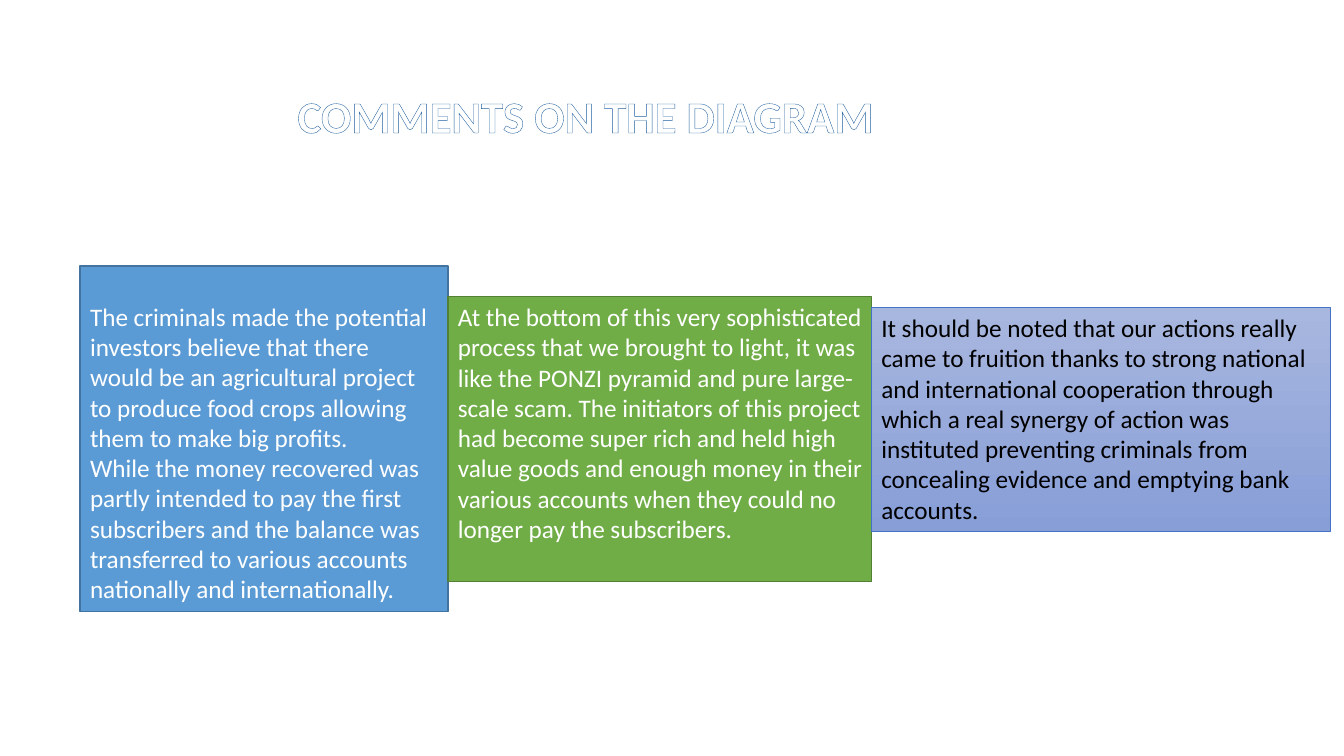
from lxml.etree import SubElement
from pptx import Presentation
from pptx.dml.color import RGBColor
from pptx.enum.shapes import MSO_SHAPE
from pptx.enum.text import MSO_ANCHOR, PP_ALIGN
from pptx.oxml.ns import qn
from pptx.util import Cm, Pt

COMMENTS = [
    {"top": 6.7, "width": 9.27, "height": 8.71, "fill": ["5B9BD5"],
     "line": "43739E", "line_width": 1, "color": "FFFFFF",
     "frame": {"vertical_anchor": MSO_ANCHOR.BOTTOM, "margin_bottom": Cm(0.2)},
     "paragraphs": [
         "The criminals made the potential investors believe that there would "
         "be an agricultural project to produce food crops allowing them to "
         "make big profits.",
         "While the money recovered was partly intended to pay the first "
         "subscribers and the balance was transferred to various accounts "
         "nationally and internationally."]},
    {"top": 7.47, "width": 10.67, "height": 7.19, "fill": ["70AD47"],
     "line": "538035", "line_width": 1, "color": "FFFFFF",
     "frame": {"vertical_anchor": MSO_ANCHOR.TOP, "margin_right": Cm(0.2)},
     "paragraphs": [
         "At the bottom of this very sophisticated process that we brought to "
         "light, it was like the PONZI pyramid and pure large-scale scam. The "
         "initiators of this project had become super rich and held high "
         "value goods and enough money in their various accounts when they "
         "could no longer pay the subscribers."]},
    {"top": 7.75, "width": 11.56, "height": 5.64, "fill": ["A8B7DF", "889ED7"],
     "line": "4472C4", "line_width": 0.5, "color": "000000",
     "frame": {"vertical_anchor": MSO_ANCHOR.TOP},
     "paragraphs": [
         "It should be noted that our actions really came to fruition thanks "
         "to strong national and international cooperation through which a "
         "real synergy of action was instituted preventing criminals from "
         "concealing evidence and emptying bank accounts."]},
]


def color(value):
    return RGBColor.from_string(value)


def set_attributes(target, values):
    for name, value in values.items():
        setattr(target, name, value)


def outline_text(run, line_color, width):
    """Give the letters a coloured outline."""
    properties = run.font._element
    line = SubElement(properties, qn("a:ln"), w=str(Pt(width)))
    solid = SubElement(line, qn("a:solidFill"))
    SubElement(solid, qn("a:srgbClr"), val=line_color)
    properties.insert(0, line)


def add_title(slide, left, top, width, height):
    title = slide.shapes.title
    set_attributes(title, {"left": Cm(left), "top": Cm(top),
                           "width": Cm(width), "height": Cm(height)})
    set_attributes(title.text_frame, {
        "word_wrap": True, "vertical_anchor": MSO_ANCHOR.MIDDLE,
        "margin_left": Cm(5.17), "margin_top": Cm(0.4)})
    paragraph = title.text_frame.paragraphs[0]
    set_attributes(paragraph, {"alignment": PP_ALIGN.LEFT, "line_spacing": 0.9})
    run = paragraph.add_run()
    run.text = "COMMENTS ON THE DIAGRAM"
    set_attributes(run.font, {"name": "Calibri", "size": Pt(32), "bold": True})
    run.font.color.rgb = color("FFFFFF")
    outline_text(run, "1F5F9F", 2.5)


def fill_shape(shape, colors):
    """Use a solid fill for one colour, a downward gradient for two."""
    if len(colors) == 1:
        shape.fill.solid()
        shape.fill.fore_color.rgb = color(colors[0])
        return
    shape.fill.gradient()
    shape.fill.gradient_angle = 270
    for stop, value in zip(shape.fill.gradient_stops, colors):
        stop.color.rgb = color(value)


def add_comment(slide, left, comment):
    shape = slide.shapes.add_shape(
        MSO_SHAPE.RECTANGLE, Cm(left), Cm(comment["top"]),
        Cm(comment["width"]), Cm(comment["height"]))
    shape.shadow.inherit = False
    fill_shape(shape, comment["fill"])
    shape.line.color.rgb = color(comment["line"])
    shape.line.width = Pt(comment["line_width"])

    # Text of the box
    frame = shape.text_frame
    frame.word_wrap = True
    set_attributes(frame, comment["frame"])
    for index, text in enumerate(comment["paragraphs"]):
        paragraph = frame.add_paragraph() if index else frame.paragraphs[0]
        paragraph.alignment = PP_ALIGN.LEFT
        run = paragraph.add_run()
        run.text = text
        set_attributes(run.font, {"name": "Calibri", "size": Pt(18)})
        run.font.color.rgb = color(comment["color"])


def add_comment_row(slide, left):
    """Place the comments side by side, each touching the one before."""
    for comment in COMMENTS:
        add_comment(slide, left, comment)
        left += comment["width"]


def main():
    presentation = Presentation()
    set_attributes(presentation, {"slide_width": Cm(33.87),
                                  "slide_height": Cm(19.05)})
    slide = presentation.slides.add_slide(presentation.slide_layouts[5])
    add_title(slide, 2.33, 1.01, 29.21, 3.68)
    add_comment_row(slide, 2.02)
    presentation.save("out.pptx")


if __name__ == "__main__":
    main()
